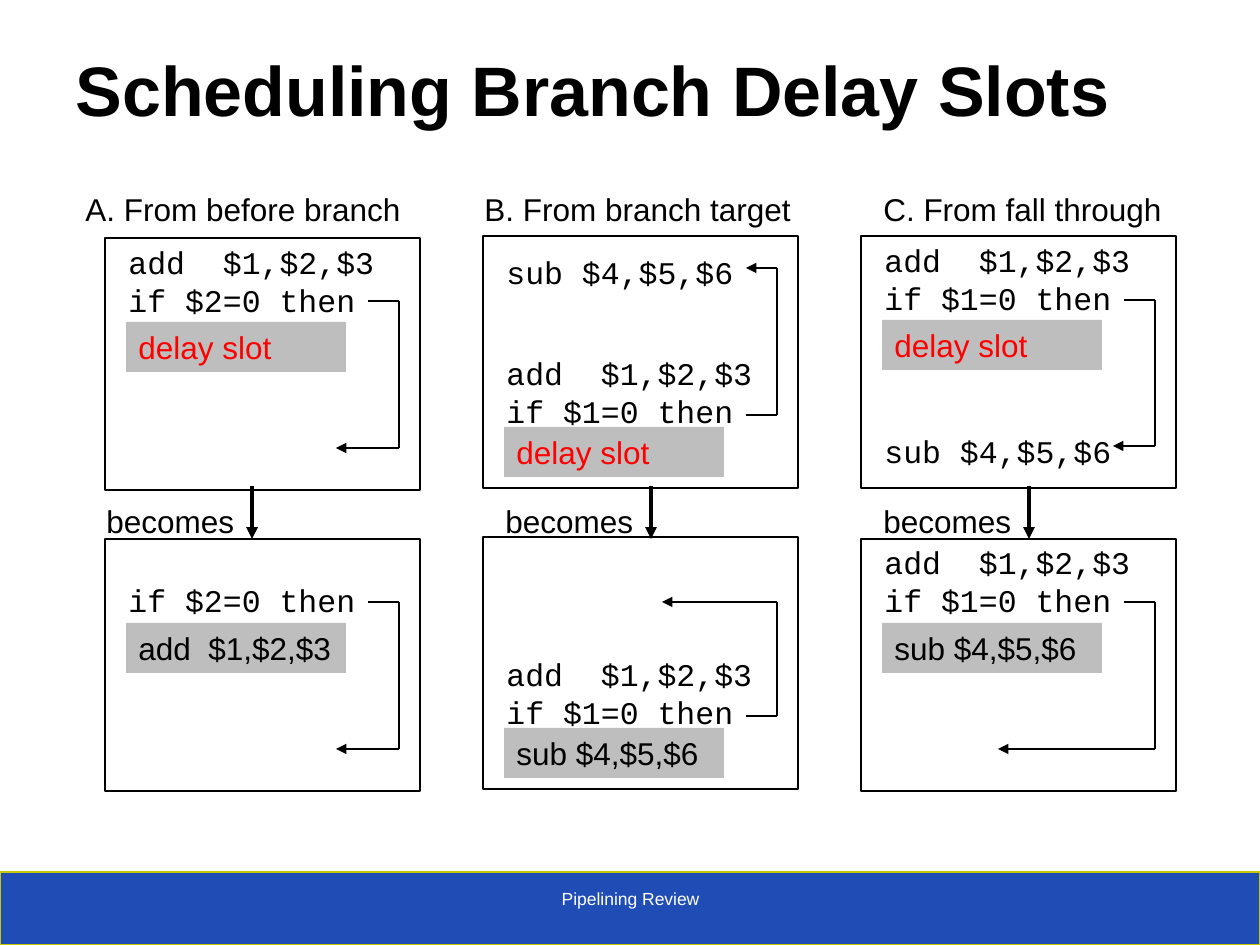
from lxml.etree import SubElement
from pptx import Presentation
from pptx.dml.color import RGBColor
from pptx.enum.shapes import MSO_CONNECTOR, MSO_SHAPE
from pptx.enum.text import MSO_ANCHOR, MSO_AUTO_SIZE, PP_ALIGN
from pptx.oxml.ns import qn
from pptx.util import Emu, Pt

PX = 914400 / 126
COLORS = {name: RGBColor.from_string(value) for name, value in {
    "black": "000000", "white": "FFFFFF", "red": "FF0000",
    "slot": "BEBEBE", "bar": "204DB5", "bar_line": "C8C800"}.items()}

presentation = Presentation()
presentation.slide_width, presentation.slide_height = Emu(9144000), Emu(6858000)
slide = presentation.slides.add_slide(presentation.slide_layouts[5])
shapes = slide.shapes


def add_text(text, box, font="Arial", color="black", size=18):
    shape = shapes.add_textbox(*[Emu(round(v * PX)) for v in box])
    frame = shape.text_frame
    frame.word_wrap = True
    frame.text = text
    for paragraph in frame.paragraphs:
        paragraph.font.name = font
        paragraph.font.size = Pt(size)
        paragraph.font.color.rgb = COLORS[color]
    return shape


def add_line(start, end, width=1, arrow=False):
    ends = [Emu(round(v * PX)) for v in (*start, *end)]
    line = shapes.add_connector(MSO_CONNECTOR.STRAIGHT, *ends)
    line.line.color.rgb = COLORS["black"]
    line.line.width = Pt(width)
    properties = line._element.spPr
    if arrow:
        SubElement(properties.find(qn("a:ln")), qn("a:tailEnd"), type="triangle")
    SubElement(properties, qn("a:effectLst"))


# Footer bar
bar = shapes.add_shape(MSO_SHAPE.RECTANGLE, 0, Emu(round(872 * PX)),
                       presentation.slide_width, Emu(round(73 * PX)))
bar.shadow.inherit = False
bar.fill.solid()
bar.fill.fore_color.rgb = COLORS["bar"]
bar.line.color.rgb = COLORS["bar_line"]
bar.line.width = Pt(0.75)
footer = add_text("Pipelining Review", (431, 882, 399, 42), color="white", size=10)
footer.text_frame.paragraphs[0].alignment = PP_ALIGN.CENTER

# Title
title = shapes.title
title.left, title.top, title.width, title.height = [
    Emu(round(v * PX)) for v in (63, 32, 1162, 105)]
title.text_frame.text = "Scheduling Branch Delay Slots"
title.text_frame.auto_size = MSO_AUTO_SIZE.NONE
title.text_frame.vertical_anchor = MSO_ANCHOR.BOTTOM
heading = title.text_frame.paragraphs[0]
heading.alignment = PP_ALIGN.LEFT
heading.font.name = "Arial"
heading.font.size = Pt(40)
heading.font.bold = True
heading.font.color.rgb = COLORS["black"]

# Column headings and the "becomes" arrows: heading, left, width, becomes left
for text, left, width, becomes_left in [
        ("A. From before branch", 73, 357, 94),
        ("B. From branch target", 472, 347, 493),
        ("C. From fall through", 871, 326, 871)]:
    add_text(text, (left, 184, width, 50))
    add_text("becomes", (becomes_left, 496, 158, 50))
    arrow_x = becomes_left + 158
    add_line((arrow_x, 486), (arrow_x, 539), 2.25, arrow=True)

# Code panels: column, top, [(code, top)], slot text, slot color, slot top,
# branch y, target y, arrow tip measured from the panel's left edge
ADD_IF = "add  $1,$2,$3\nif $1=0 then"
SUB = "sub $4,$5,$6"
SLOT = "delay slot"
panels = [
    (0, 238, [("add  $1,$2,$3\nif $2=0 then", 237)], SLOT, "red", 322, 301, 448, 231),
    (1, 236, [(SUB, 247), (ADD_IF, 348)], SLOT, "red", 427, 415, 268, 263),
    (2, 236, [(ADD_IF, 235), (SUB, 426)], SLOT, "red", 320, 300, 446, 252),
    (0, 539, [("if $2=0 then", 575)], "add  $1,$2,$3", "black", 623, 602, 749, 231),
    (1, 537, [(ADD_IF, 649)], SUB, "black", 728, 716, 602, 179),
    (2, 539, [(ADD_IF, 537)], SUB, "black", 623, 602, 749, 137),
]
for column, top, codes, slot_text, slot_color, slot_top, branch_y, target_y, tip in panels:
    left = 105 + 378 * column
    panel = shapes.add_shape(MSO_SHAPE.RECTANGLE, *[
        Emu(round(v * PX)) for v in (left, top, 315, 252)])
    panel.shadow.inherit = False
    panel.fill.background()
    panel.line.color.rgb = COLORS["black"]
    panel.line.width = Pt(1)
    # The slot lies behind the code, so it never hides the line above it
    slot = add_text(slot_text, (left + 21, slot_top, 220, 50), color=slot_color)
    slot.fill.solid()
    slot.fill.fore_color.rgb = COLORS["slot"]
    for code, code_top in codes:
        height = 88 if "\n" in code else 50
        add_text(code, (left + 11, code_top, 284, height), "Courier New")
    wire_x = left + 294
    add_line((left + 263, branch_y), (wire_x, branch_y))
    add_line((wire_x, branch_y), (wire_x, target_y))
    add_line((wire_x, target_y), (left + tip, target_y), arrow=True)

presentation.save("out.pptx")
